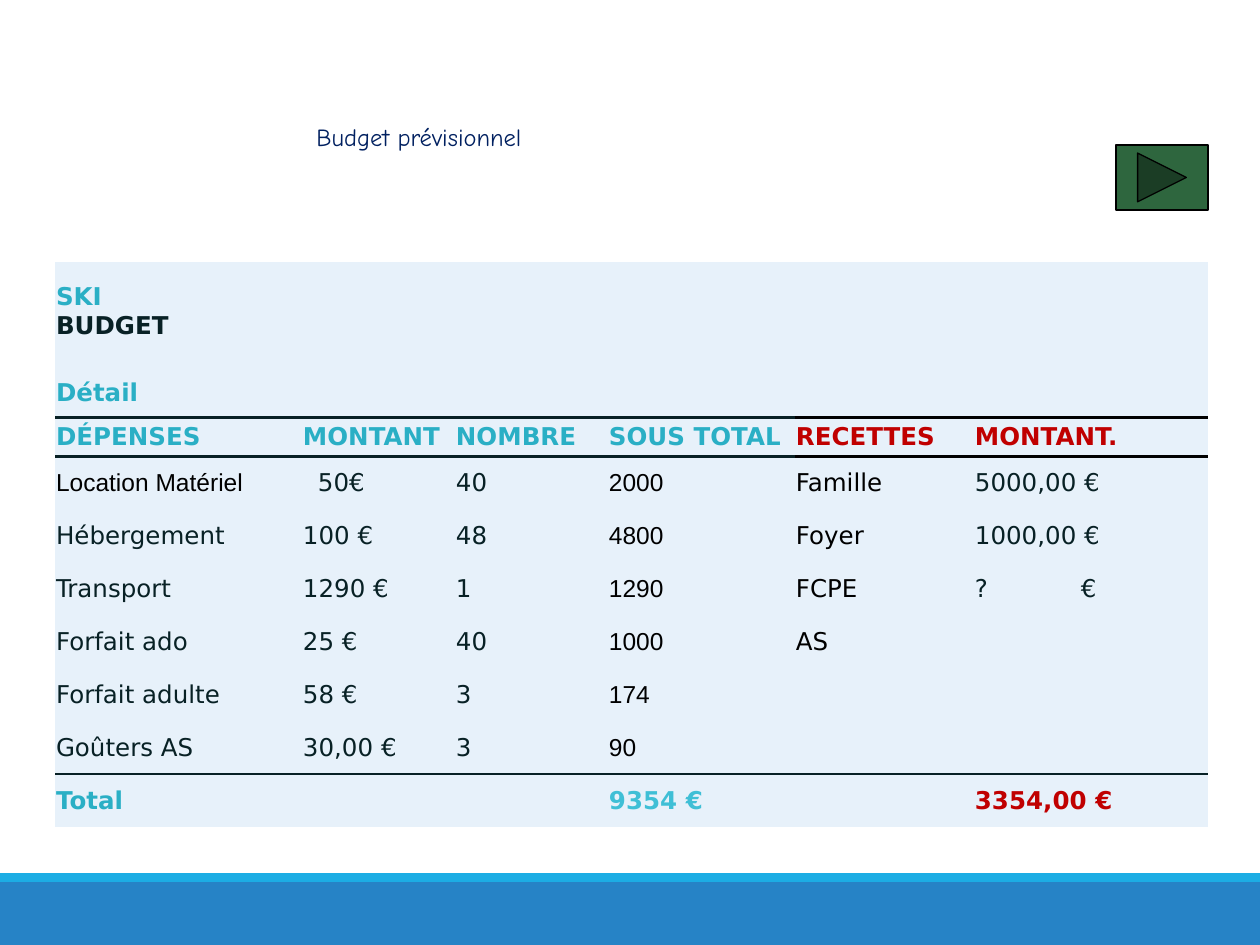
from lxml import etree
from pptx import Presentation
from pptx import util as u
from pptx.dml.color import RGBColor
from pptx.enum import shapes, text
from pptx.oxml import ns

EMU_PER_PX = 914400 / 126
WIDTH, HEIGHT = 1260, 945

NAVY = RGBColor(0x00, 0x20, 0x60)
BLUE = RGBColor(0x26, 0x83, 0xC6)
CYAN = RGBColor(0x1C, 0xAD, 0xE4)
GREEN = RGBColor(0x2E, 0x66, 0x3E)
PALE = RGBColor(0xE7, 0xF1, 0xFA)
TEAL = RGBColor(0x2A, 0xAF, 0xC5)
LIGHT_TEAL = RGBColor(0x3F, 0xBF, 0xD6)
INK = RGBColor(0x08, 0x21, 0x25)
RED = RGBColor(0xC0, 0x00, 0x00)
BLACK = RGBColor(0x00, 0x00, 0x00)

NO_GRID_STYLE = "{2D5ABB26-0587-4C30-8999-92F81FD0307C}"

COLUMN_WIDTHS = [247, 153, 153, 187, 179, 234]
ROW_HEIGHTS = [49, 67, 39, 39] + [53] * 7
ROWS = [
    ["SKI"],
    ["BUDGET"],
    ["Détail"],
    ["DÉPENSES", "MONTANT", "NOMBRE", "SOUS TOTAL", "RECETTES", "MONTANT."],
    ["Location Matériel", "50€", "40", "2000", "Famille", "5000,00 €"],
    ["Hébergement", "100 €", "48", "4800", "Foyer", "1000,00 €"],
    ["Transport", "1290 €", "1", "1290", "FCPE", "?\t€"],
    ["Forfait ado", "25 €", "40", "1000", "AS"],
    ["Forfait adulte", "58 €", "3", "174"],
    ["Goûters AS", "30,00 €", "3", "90"],
    ["Total", "", "", "9354 €", "", "3354,00 €"],
]
DETAIL, HEADER, FIRST_ITEM, LAST_ITEM, TOTAL = 2, 3, 4, 9, 10
SUBTOTAL, INCOME = 3, 4  # column numbers


def px(length):
    return u.Emu(round(length * EMU_PER_PX))


def write(frame, content, font="DejaVu Sans", size=14, color=INK, bold=False,
          align=text.PP_ALIGN.LEFT):
    paragraph = frame.paragraphs[0]
    paragraph.alignment = align
    run = paragraph.add_run()
    run.text = content
    run.font.name, run.font.size, run.font.bold = font, u.Pt(size), bold
    run.font.color.rgb = color
    return paragraph


def add_tab_stop(paragraph, position):
    properties = paragraph._p.get_or_add_pPr()
    tabs = etree.SubElement(properties, ns.qn("a:tabLst"))
    etree.SubElement(tabs, ns.qn("a:tab"), pos=str(px(position)), algn="l")


def add_border(cell, side, color, width=1.5):
    line = etree.Element(ns.qn(f"a:ln{side}"), w=str(u.Pt(width)))
    fill = etree.SubElement(line, ns.qn("a:solidFill"))
    etree.SubElement(fill, ns.qn("a:srgbClr"), val=str(color))
    cell._tc.get_or_add_tcPr().insert(0, line)


def cell_format(row, column):
    """Font, colour and weight of a budget cell."""
    if row < HEADER:
        return {"color": INK if row == 1 else TEAL, "bold": True}
    if row == HEADER:
        return {"color": RED if column >= INCOME else TEAL, "bold": True}
    if row == TOTAL:
        colors = {0: TEAL, SUBTOTAL: LIGHT_TEAL}
        return {"color": colors.get(column, RED), "bold": True}
    if column == SUBTOTAL or (row, column) == (FIRST_ITEM, 0):
        return {"font": "Arial", "color": BLACK}
    return {"color": BLACK if column == INCOME else INK}


class BudgetSlide:
    def __init__(self, presentation):
        self.slide = presentation.slides.add_slide(presentation.slide_layouts[5])

    def title(self, content, left, top, width, height):
        shape = self.slide.shapes.title
        shape.left, shape.top = px(left), px(top)
        shape.width, shape.height = px(width), px(height)
        shape.text_frame.vertical_anchor = text.MSO_ANCHOR.TOP
        write(shape.text_frame, content, font="Comic Neue", color=NAVY,
              align=text.PP_ALIGN.CENTER)

    def shape(self, kind, left, top, width, height, fill, line=None):
        shape = self.slide.shapes.add_shape(
            kind, px(left), px(top), px(width), px(height))
        shape.shadow.inherit = False
        shape.fill.solid()
        shape.fill.fore_color.rgb = fill
        if line is None:
            shape.line.fill.background()
        else:
            shape.line.color.rgb = line
            shape.line.width = u.Pt(0.75)

    def table(self, left, top):
        frame = self.slide.shapes.add_table(
            len(ROWS), len(COLUMN_WIDTHS), px(left), px(top),
            px(sum(COLUMN_WIDTHS)), px(sum(ROW_HEIGHTS)))
        table = frame.table
        table.first_row = table.horz_banding = False
        table._tbl.tblPr.find(ns.qn("a:tableStyleId")).text = NO_GRID_STYLE
        for column, width in zip(table.columns, COLUMN_WIDTHS):
            column.width = px(width)
        for row, height in zip(table.rows, ROW_HEIGHTS):
            row.height = px(height)
        for row, contents in enumerate(ROWS):
            for column in range(len(COLUMN_WIDTHS)):
                content = contents[column] if column < len(contents) else ""
                self.cell(table.cell(row, column), content, row, column)

    def cell(self, cell, content, row, column):
        cell.fill.solid()
        cell.fill.fore_color.rgb = PALE
        cell.margin_left = cell.margin_right = cell.margin_top = px(1)
        cell.margin_bottom = 0
        if row == 0:
            cell.vertical_anchor = text.MSO_ANCHOR.BOTTOM
        elif row >= HEADER:
            cell.vertical_anchor = text.MSO_ANCHOR.MIDDLE

        if content:
            paragraph = write(cell.text_frame, content, **cell_format(row, column))
            if "\t" in content:
                add_tab_stop(paragraph, 106)
            if (row, column) == (FIRST_ITEM, 1):
                cell.margin_left = px(16)

        # Rules above the header row and above the total
        if row in (DETAIL, HEADER):
            color = BLACK if column >= INCOME else INK
            add_border(cell, "B" if row == DETAIL else "T", color)
        elif row in (LAST_ITEM, TOTAL):
            add_border(cell, "B" if row == LAST_ITEM else "T", INK)


def main():
    presentation = Presentation()
    presentation.slide_width, presentation.slide_height = px(WIDTH), px(HEIGHT)
    budget = BudgetSlide(presentation)
    kinds = shapes.MSO_SHAPE

    # Footer bands
    budget.shape(kinds.RECTANGLE, 0, 882, WIDTH, 63, BLUE)
    budget.shape(kinds.RECTANGLE, 0, 873, WIDTH, 9, CYAN)

    # Title and next button
    budget.title("Budget prévisionnel", 174, 116, 490, 59)
    budget.shape(kinds.ACTION_BUTTON_FORWARD_OR_NEXT, 1116, 145, 92, 65,
                 GREEN, BLACK)

    # Budget table
    budget.table(55, 262)

    presentation.save("out.pptx")


if __name__ == "__main__":
    main()
